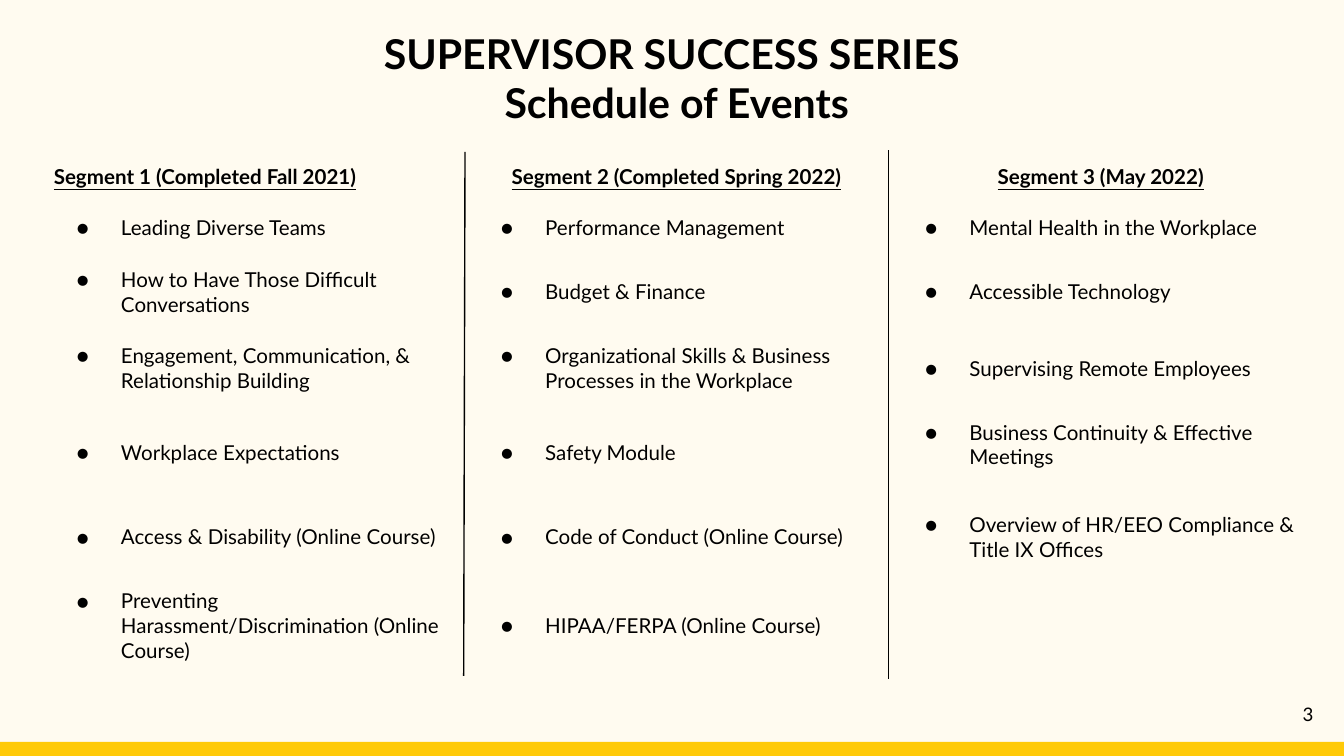
from lxml.etree import SubElement
from pptx import Presentation
from pptx.dml.color import RGBColor
from pptx.enum.shapes import MSO_CONNECTOR, MSO_SHAPE
from pptx.enum.text import MSO_ANCHOR, PP_ALIGN
from pptx.oxml.ns import qn
from pptx.util import Inches, Pt

BLACK = RGBColor(0x00, 0x00, 0x00)
CREAM = RGBColor(0xFF, 0xFB, 0xF0)
GOLD = RGBColor(0xFF, 0xCA, 0x08)

SEGMENTS = {
    "Segment 1 (Completed Fall 2021)": [
        "Leading Diverse Teams",
        "How to Have Those Difficult Conversations",
        "Engagement, Communication, & Relationship Building",
        "Workplace Expectations",
        "Access & Disability (Online Course)",
        "Preventing Harassment/Discrimination (Online Course)",
    ],
    "Segment 2 (Completed Spring 2022)": [
        "Performance Management",
        "Budget & Finance",
        "Organizational Skills & Business Processes in the Workplace",
        "Safety Module",
        "Code of Conduct (Online Course)",
        "HIPAA/FERPA (Online Course)",
    ],
    "Segment 3 (May 2022)": [
        "Mental Health in the Workplace",
        "Accessible Technology",
        "Supervising Remote Employees",
        "Business Continuity & Effective Meetings",
        "Overview of HR/EEO Compliance & Title IX Offices",
    ],
}
SLIDE_WIDTH = 10
SCHEDULE_WIDTH = 9.47
ROW_HEIGHTS = [0.34, 0.34, 0.51, 0.51, 0.69, 0.51, 0.68]


def write(paragraph, text, size=11, bold=False, underline=False, align=PP_ALIGN.LEFT):
    paragraph.alignment = align
    run = paragraph.add_run()
    run.text = text
    font = run.font
    font.name = "Lato"
    font.size = Pt(size)
    font.bold = bold
    font.underline = underline
    font.color.rgb = BLACK


def add_bullet(paragraph):
    properties = paragraph._p.get_or_add_pPr()
    properties.set("marL", str(Inches(0.5)))
    properties.set("indent", str(Inches(-0.33)))
    color = SubElement(properties, qn("a:buClr"))
    SubElement(color, qn("a:srgbClr")).set("val", str(BLACK))
    SubElement(properties, qn("a:buSzPts")).set("val", "1100")
    SubElement(properties, qn("a:buFont")).set("typeface", "Lato")
    SubElement(properties, qn("a:buChar")).set("char", "●")


def set_margins(target):
    target.margin_left = target.margin_right = Inches(0.1)
    target.margin_top = target.margin_bottom = Inches(0.1)


class ScheduleSlide:
    def __init__(self, slide):
        self.slide = slide
        self.shapes = slide.shapes
        background = slide.background.fill
        background.solid()
        background.fore_color.rgb = CREAM

    def bar(self, left, top, width, height, color):
        band = self.shapes.add_shape(
            MSO_SHAPE.RECTANGLE, Inches(left), Inches(top), Inches(width), Inches(height)
        )
        band.shadow.inherit = False
        band.fill.solid()
        band.fill.fore_color.rgb = color
        band.line.fill.background()

    def text(self, left, top, width, height, lines, anchor=MSO_ANCHOR.TOP, **style):
        frame = self.shapes.add_textbox(
            Inches(left), Inches(top), Inches(width), Inches(height)
        ).text_frame
        frame.word_wrap = True
        frame.vertical_anchor = anchor
        set_margins(frame)
        for index, line in enumerate(lines):
            paragraph = frame.add_paragraph() if index else frame.paragraphs[0]
            write(paragraph, line, **style)

    def divider(self, start, end):
        rule = self.shapes.add_connector(
            MSO_CONNECTOR.STRAIGHT, *[Inches(value) for value in start + end]
        )
        rule.line.color.rgb = BLACK
        rule.line.width = Pt(0.75)
        SubElement(rule._element.spPr, qn("a:effectLst"))

    def schedule(self, left, top, width, segments):
        grid = self.shapes.add_table(
            len(ROW_HEIGHTS), len(segments), Inches(left), Inches(top),
            Inches(width), Inches(sum(ROW_HEIGHTS)),
        ).table
        grid.first_row = grid.horz_banding = False
        for row, height in zip(grid.rows, ROW_HEIGHTS):
            row.height = Inches(height)
        for cell in grid.iter_cells():
            self.clear_cell(cell)
        for column, (heading, events) in enumerate(segments.items()):
            align = PP_ALIGN.CENTER if column else PP_ALIGN.LEFT
            write(grid.cell(0, column).text_frame.paragraphs[0], heading,
                  bold=True, underline=True, align=align)
            for row, event in enumerate(events, 1):
                paragraph = grid.cell(row, column).text_frame.paragraphs[0]
                write(paragraph, event)
                add_bullet(paragraph)
        grid.cell(4, 2).vertical_anchor = MSO_ANCHOR.TOP

    def clear_cell(self, cell):
        set_margins(cell)
        cell.vertical_anchor = MSO_ANCHOR.MIDDLE
        properties = cell._tc.get_or_add_tcPr()
        for side in ("lnL", "lnR", "lnT", "lnB"):
            SubElement(SubElement(properties, qn(f"a:{side}")), qn("a:noFill"))
        cell.fill.background()


def main():
    presentation = Presentation()
    presentation.slide_width = Inches(SLIDE_WIDTH)
    presentation.slide_height = Inches(SLIDE_WIDTH * 9 / 16)
    page = ScheduleSlide(presentation.slides.add_slide(presentation.slide_layouts[6]))
    page.bar(0, 5.52, SLIDE_WIDTH, 0.11, GOLD)
    page.text(9.27, 5.1, 0.6, 0.43, ["3"], anchor=MSO_ANCHOR.MIDDLE,
              size=10, align=PP_ALIGN.RIGHT)
    page.text(0.53, 0.11, 9.01, 0.94, ["SUPERVISOR SUCCESS SERIES ", "Schedule of Events"],
              size=22, bold=True, align=PP_ALIGN.CENTER)
    page.schedule(0.3, 1.12, SCHEDULE_WIDTH, SEGMENTS)
    page.divider((3.46, 1.13), (3.45, 5.03))
    page.divider((6.61, 1.12), (6.61, 5.05))
    presentation.save("out.pptx")


if __name__ == "__main__":
    main()
